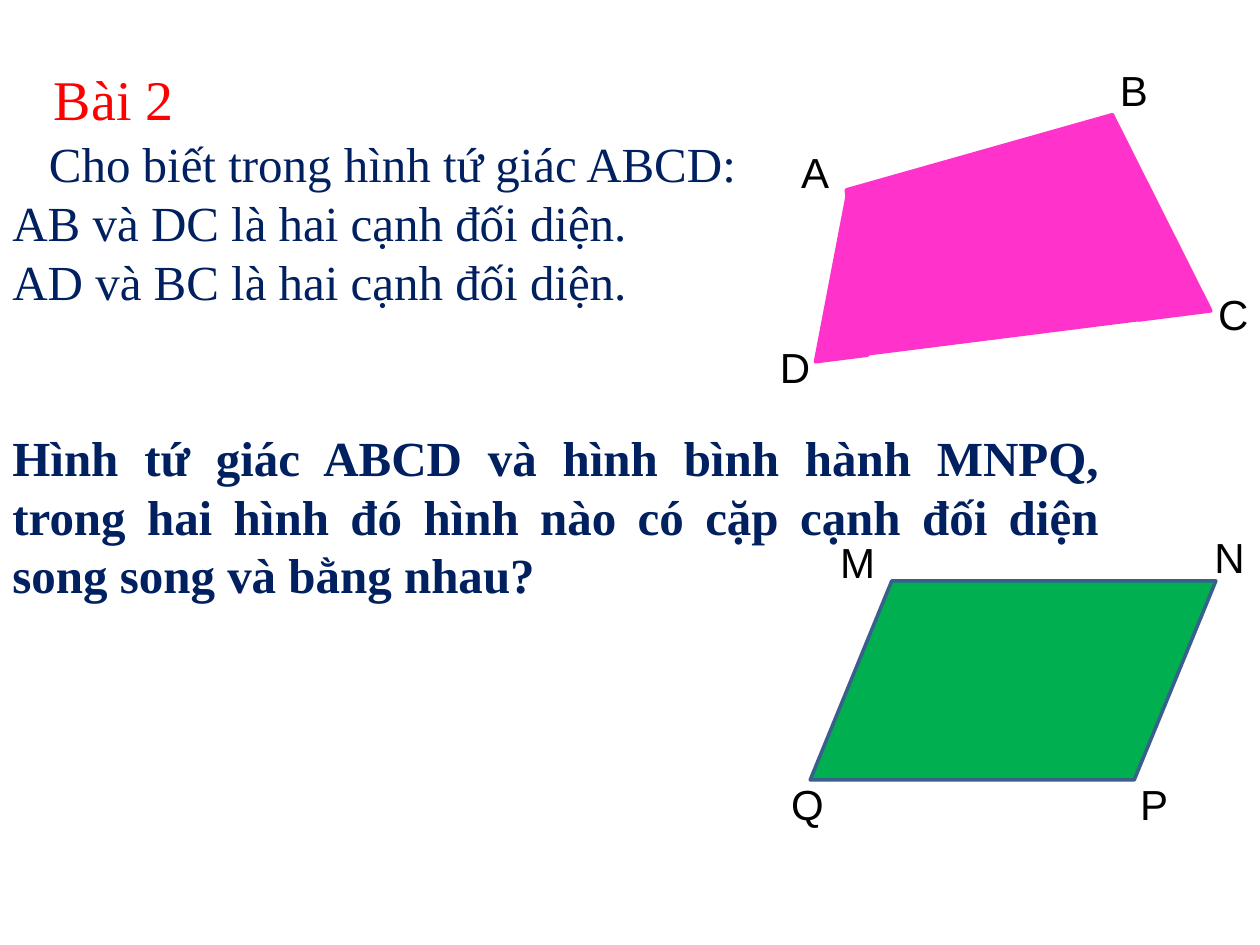
"""Build a geometry exercise slide about opposite sides of quadrilaterals."""
from pptx import Presentation
from pptx.dml.color import RGBColor
from pptx.enum.shapes import MSO_SHAPE
from pptx.enum.text import MSO_AUTO_SIZE, PP_ALIGN
from pptx.util import Inches, Pt

NAVY = RGBColor(0x00, 0x20, 0x60)
RED = RGBColor(0xFF, 0x00, 0x00)
BLACK = RGBColor(0x00, 0x00, 0x00)
PINK = RGBColor(0xFF, 0x33, 0xCC)
GREEN = RGBColor(0x00, 0xB0, 0x50)
STEEL = RGBColor(0x3A, 0x5F, 0x8C)

MANUAL_INPUT = MSO_SHAPE.FLOWCHART_MANUAL_INPUT
TRIANGLE = MSO_SHAPE.RIGHT_TRIANGLE
PARALLELOGRAM = MSO_SHAPE.PARALLELOGRAM
FIT_TEXT = MSO_AUTO_SIZE.SHAPE_TO_FIT_TEXT
JUSTIFY = PP_ALIGN.JUSTIFY

SERIF = "Times New Roman"
SANS = "Arial"
TILT = 352.8


class ExerciseSlide:
    def __init__(self, slide):
        self.slide = slide

    def group(self):
        return self.slide.shapes.add_group_shape().shapes

    def text(self, shapes, box, lines, size, font, color):
        shape = shapes.add_textbox(*map(Inches, box))
        frame = shape.text_frame
        frame.word_wrap = True
        frame.auto_size = FIT_TEXT
        frame.text = "\n".join(lines)
        for paragraph in frame.paragraphs:
            for run in paragraph.runs:
                run.font.size = Pt(size)
                run.font.name = font
                run.font.color.rgb = color
        return frame.paragraphs

    def labels(self, shapes, width, positions):
        for letter, (left, top) in positions.items():
            self.text(shapes, (left, top, width, 0.5), [letter], 24, SANS, BLACK)

    def figure(self, shapes, kind, box, fill, line, rotation=0):
        shape = shapes.add_shape(kind, *map(Inches, box))
        shape.shadow.inherit = False
        shape.rotation = rotation
        shape.fill.solid()
        shape.fill.fore_color.rgb = fill
        shape.line.color.rgb = line
        shape.line.width = Pt(2)
        return shape

    def exercise(self, box, lines):
        paragraphs = self.text(self.slide.shapes, box, lines, 28, SERIF, NAVY)
        for paragraph in paragraphs:
            paragraph.alignment = JUSTIFY
        paragraphs[0]._p.get_or_add_pPr().set("indent", str(Inches(0.29)))
        question = paragraphs[-1]
        question.space_before = Pt(67)
        question.runs[0].font.bold = True

    def quadrilateral(self):
        shapes = self.group()
        self.figure(shapes, MANUAL_INPUT, (6.77, 1.04, 2.17, 1.64), PINK, PINK, TILT)
        self.figure(shapes, TRIANGLE, (8.93, 0.87, 0.58, 1.64), PINK, PINK, TILT)
        left_side = self.figure(shapes, TRIANGLE, (6.39, 1.56, 0.42, 1.29), PINK, PINK, TILT)
        left_side.element.spPr.get_or_add_xfrm().set("flipH", "1")
        self.labels(shapes, 0.58, {"A": (6.26, 1.11), "B": (8.79, 0.46),
                                   "C": (9.57, 2.24), "D": (6.09, 2.66)})

    def parallelogram(self):
        shapes = self.group()
        shape = self.figure(shapes, PARALLELOGRAM, (6.43, 4.61, 3.22, 1.58), GREEN, STEEL)
        shape.adjustments[0] = 0.41
        self.labels(shapes, 0.5, {"M": (6.57, 4.21), "N": (9.54, 4.17),
                                  "P": (8.95, 6.13), "Q": (6.18, 6.13)})

    def title(self, box, text):
        self.text(self.slide.shapes, box, [text], 32, SERIF, RED)


def main():
    presentation = Presentation()
    presentation.slide_width = Inches(10)
    presentation.slide_height = Inches(7.5)
    page = ExerciseSlide(presentation.slides.add_slide(presentation.slide_layouts[6]))
    page.exercise((0, 1.01, 8.82, 3.87), [
        "Cho biết trong hình tứ giác ABCD:",
        "AB và DC là hai cạnh đối diện.",
        "AD và BC là hai cạnh đối diện.",
        "Hình tứ giác ABCD và hình bình hành MNPQ, trong hai hình đó "
        "hình nào có cặp cạnh đối diện song song và bằng nhau?",
    ])
    page.quadrilateral()
    page.parallelogram()
    page.title((0.33, 0.46, 1.25, 0.64), "Bài 2")
    presentation.save("out.pptx")


if __name__ == "__main__":
    main()
